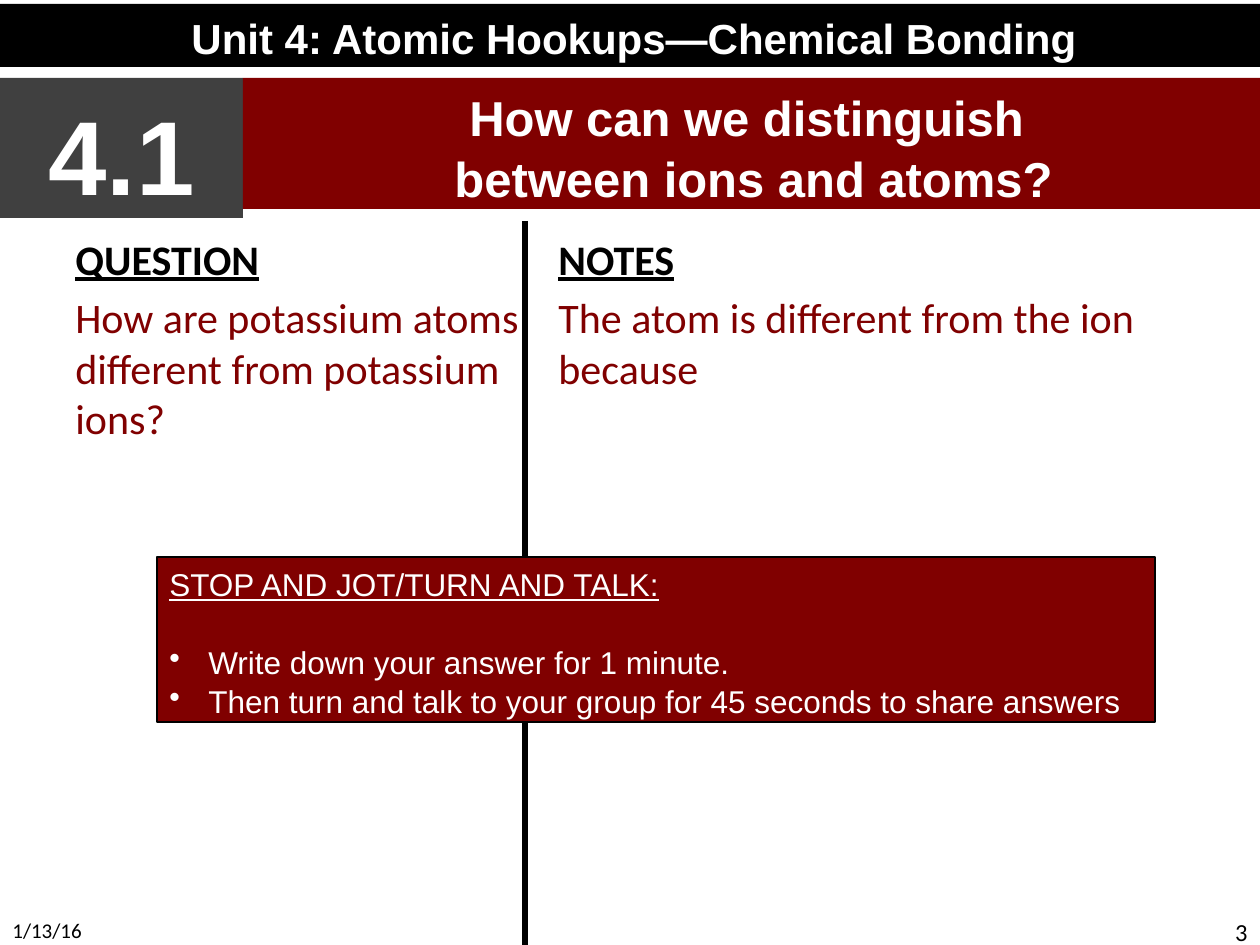
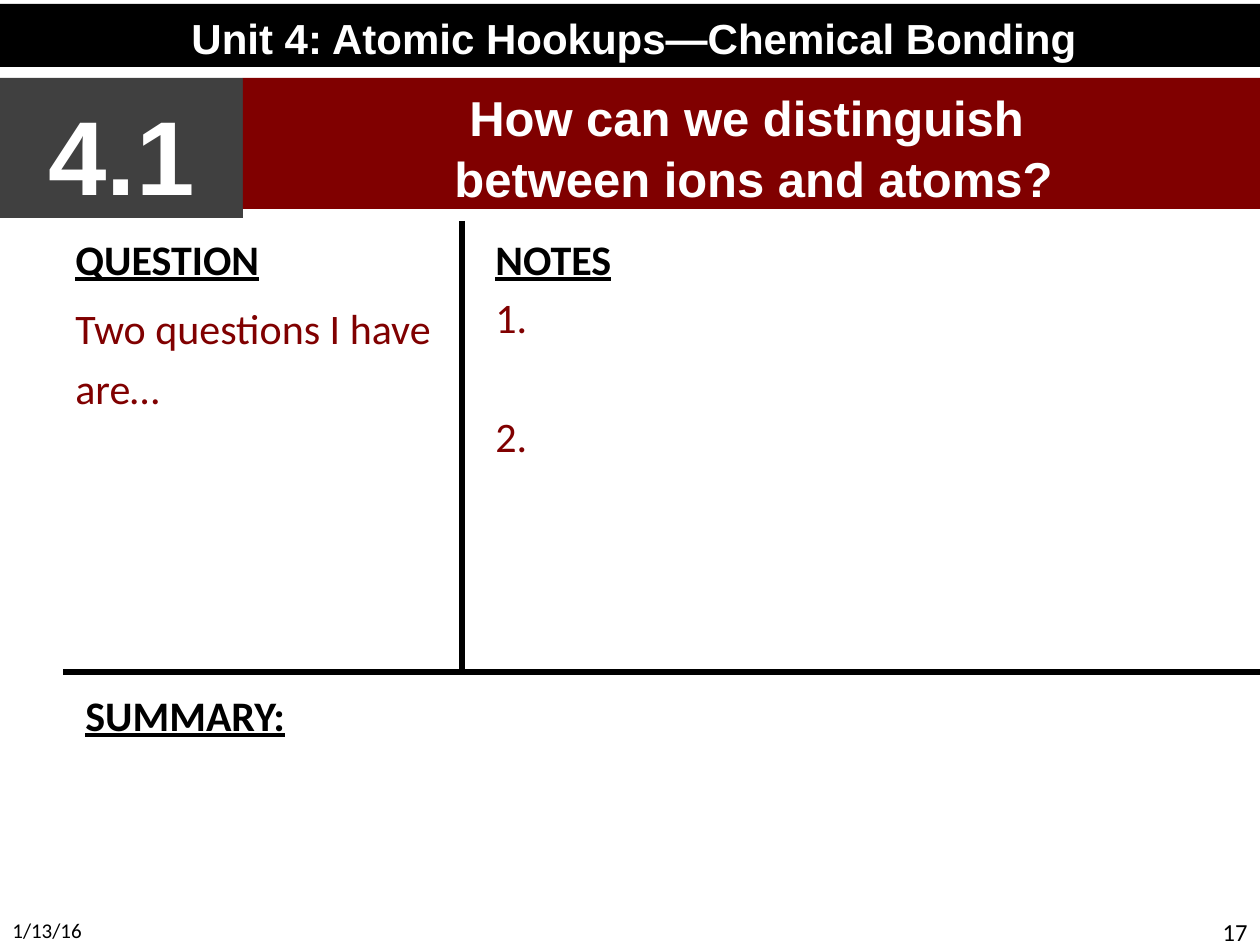
"""Build two note-taking slides for the chemical bonding unit."""
import pptx
import pptx.dml.color
import pptx.enum.shapes
import pptx.enum.text
import pptx.oxml.ns
import pptx.util
from lxml import etree

EMU_PER_PX = 914400 / 126
COLORS = {"black": "000000", "white": "FFFFFF", "gray": "404040", "maroon": "800000"}
HEADING_FONT = "Arial"
BODY_FONT = "Calibri"
BODY_SIZE = 24
BODY_GAP = 4.8
BODY_TOP = 227
SLIDE_WIDTH = 1260
SLIDE_HEIGHT = 945
DATE = "1/13/16"
ALIGN = pptx.enum.text.PP_ALIGN


def px(length):
    """Convert pixels to EMU."""
    return pptx.util.Emu(round(length * EMU_PER_PX))


def rgb(color):
    """Look up a named colour."""
    return pptx.dml.color.RGBColor.from_string(COLORS[color])


def add_bullet(paragraph, indent):
    """Give a paragraph a round bullet with a hanging indent."""
    properties = paragraph._p.get_or_add_pPr()
    properties.set("marL", str(px(indent)))
    properties.set("indent", str(-px(indent)))
    tag = pptx.oxml.ns.qn("a:buChar")
    etree.SubElement(properties, tag).set("char", "•")


def format_paragraph(paragraph, font_name, size, color, bold=False, underline=False,
                     align=ALIGN.LEFT, line_spacing=None, space_before=None):
    """Set the spacing of a paragraph and the font of its runs."""
    paragraph.alignment = align
    if line_spacing:
        paragraph.line_spacing = line_spacing
    if space_before:
        paragraph.space_before = pptx.util.Pt(space_before)
    for run in paragraph.runs:
        run.font.name = font_name
        run.font.size = pptx.util.Pt(size)
        run.font.color.rgb = rgb(color)
        run.font.bold = bold
        run.font.underline = underline


def add_text_box(slide, left, top, width, height, text):
    """Add a wrapping text box and return its paragraphs."""
    shape = slide.shapes.add_textbox(px(left), px(top), px(width), px(height))
    shape.text_frame.word_wrap = True
    shape.text_frame.text = text
    return shape.text_frame.paragraphs


def add_panel(slide, left, top, width, height, fill, text, outline=None):
    """Add a filled rectangle and return its paragraphs."""
    shape = slide.shapes.add_shape(pptx.enum.shapes.MSO_SHAPE.RECTANGLE,
                                   px(left), px(top), px(width), px(height))
    shape.shadow.inherit = False
    shape.fill.solid()
    shape.fill.fore_color.rgb = rgb(fill)
    if outline:
        shape.line.color.rgb = rgb(outline)
        shape.line.width = pptx.util.Pt(0.75)
    else:
        shape.line.fill.background()
    shape.text_frame.word_wrap = True
    shape.text_frame.vertical_anchor = pptx.enum.text.MSO_ANCHOR.TOP
    shape.text_frame.text = text
    return shape.text_frame.paragraphs


def add_band(slide, left, top, width, height, fill, text, size):
    """Add a header band with bold centred text."""
    for paragraph in add_panel(slide, left, top, width, height, fill, text):
        format_paragraph(paragraph, HEADING_FONT, size, "white", bold=True,
                         align=ALIGN.CENTER, line_spacing=1.05)


def add_rule(slide, start_x, start_y, end_x, end_y):
    """Add a thick black dividing line."""
    connector = slide.shapes.add_connector(pptx.enum.shapes.MSO_CONNECTOR.STRAIGHT,
                                           px(start_x), px(start_y), px(end_x), px(end_y))
    connector.line.color.rgb = rgb("black")
    connector.line.width = pptx.util.Pt(3)
    etree.SubElement(connector._element.spPr, pptx.oxml.ns.qn("a:effectLst"))


def add_section(slide, left, top, width, height, heading, entries=(),
                line_spacing=None, entry_gap=BODY_GAP):
    """Add an underlined heading with maroon entries below it."""
    paragraphs = add_text_box(slide, left, top, width, height,
                              "\n".join([heading, *entries]))
    format_paragraph(paragraphs[0], BODY_FONT, BODY_SIZE, "black", bold=True, underline=True)
    for index, paragraph in enumerate(paragraphs[1:]):
        format_paragraph(paragraph, BODY_FONT, BODY_SIZE, "maroon", line_spacing=line_spacing,
                         space_before=entry_gap if index else BODY_GAP)


def add_activity(slide):
    """Add the stop and jot instructions."""
    paragraphs = add_panel(slide, 157, 557, 998, 165, "maroon", "\n".join([
        "STOP AND JOT/TURN AND TALK:",
        "Write down your answer for 1 minute.",
        "Then turn and talk to your group for 45 seconds to share answers",
    ]), outline="black")
    for index, paragraph in enumerate(paragraphs):
        if index:
            add_bullet(paragraph, 39)
        format_paragraph(paragraph, HEADING_FONT, 18, "white", underline=index == 0,
                         line_spacing=1.05, space_before=21.7 if index == 1 else None)


def add_notes_slide(presentation, number, divider_x, divider_bottom):
    """Add a slide with the shared footer, bands and column divider."""
    slide = presentation.slides.add_slide(presentation.slide_layouts[6])
    footers = [(0, DATE, 12, ALIGN.LEFT), (966, str(number), 14, ALIGN.RIGHT)]
    for left, text, size, align in footers:
        paragraphs = add_text_box(slide, left, 911, 294, 34, text)
        format_paragraph(paragraphs[0], BODY_FONT, size, "black", align=align)
    add_band(slide, 0, 4, 1268, 63, "black", "Unit 4: Atomic Hookups—Chemical Bonding", 24)
    add_band(slide, 0, 78, 243, 140, "gray", "4.1", 60)
    add_band(slide, 243, 78, 1021, 131, "maroon",
             "How can we distinguish \nbetween ions and atoms?", 28)
    add_rule(slide, divider_x, 221, divider_x, divider_bottom)
    return slide


def add_question_slide(presentation):
    """Add the slide that compares potassium atoms and ions."""
    divider_x = 525
    notes_left = divider_x + 21
    slide = add_notes_slide(presentation, 3, divider_x, SLIDE_HEIGHT)
    add_section(slide, 63, BODY_TOP, 494, 624, "QUESTION",
                ["How are potassium atoms different from potassium ions?"])
    add_section(slide, notes_left, BODY_TOP, SLIDE_WIDTH - notes_left, 624, "NOTES",
                ["The atom is different from the ion because"])
    add_activity(slide)


def add_summary_slide(presentation):
    """Add the slide for open questions and a summary."""
    divider_x = 462
    notes_left = divider_x + 21
    summary_line = 672
    slide = add_notes_slide(presentation, 17, divider_x, summary_line)
    add_section(slide, 63, BODY_TOP, 399, 435, "QUESTION",
                ["Two questions I have are…"], line_spacing=1.2)
    add_section(slide, notes_left, BODY_TOP, SLIDE_WIDTH - notes_left, 435, "NOTES",
                ["1.", "2."], entry_gap=38.9)
    add_rule(slide, SLIDE_WIDTH, summary_line, 63, summary_line)
    add_section(slide, 73, 683, 1187, 262, "SUMMARY:")


def main():
    """Build and save the presentation."""
    presentation = pptx.Presentation()
    presentation.slide_width = px(SLIDE_WIDTH)
    presentation.slide_height = px(SLIDE_HEIGHT)
    add_question_slide(presentation)
    add_summary_slide(presentation)
    presentation.save("out.pptx")


if __name__ == "__main__":
    main()
